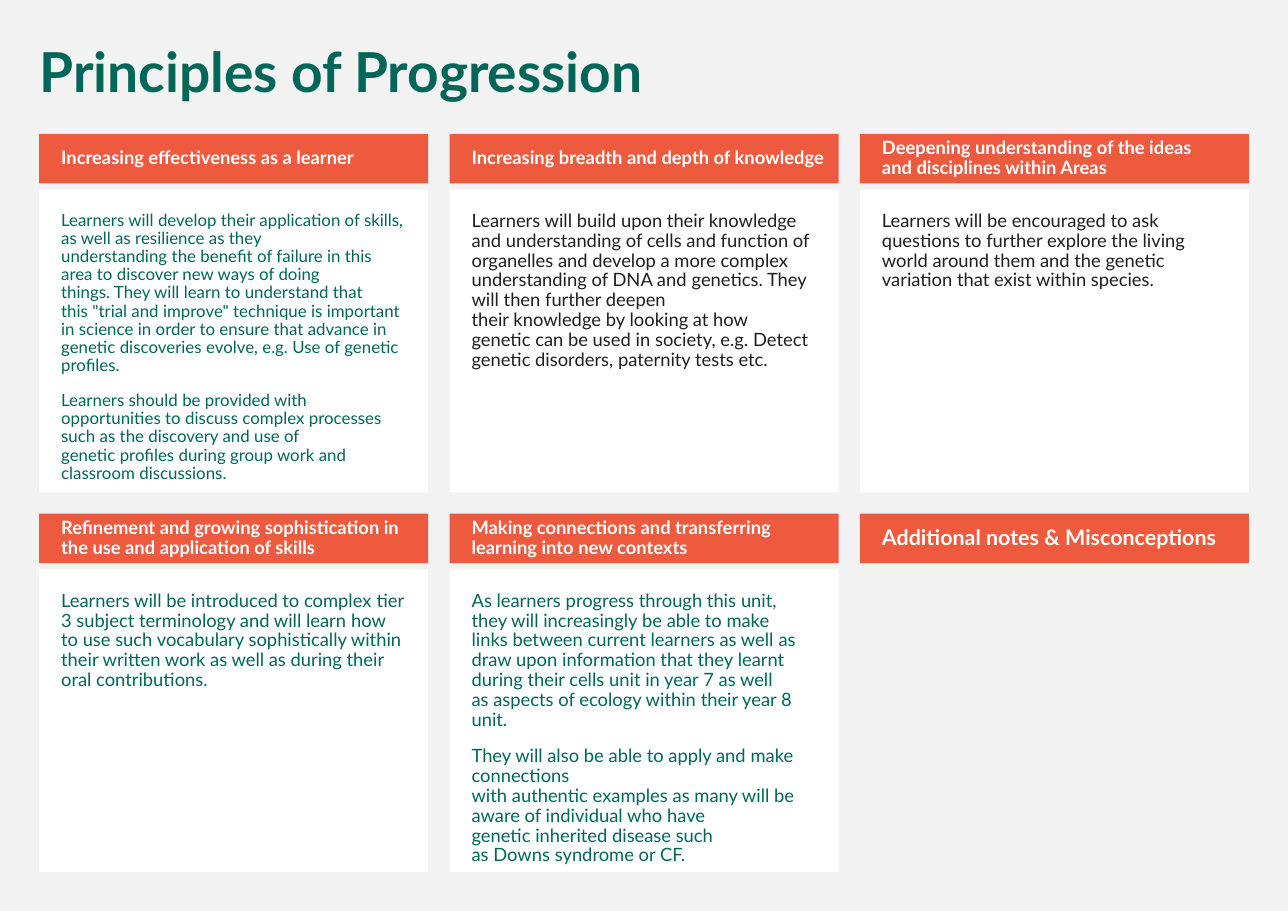
from pptx import Presentation
from pptx import util as u
from pptx.dml.color import RGBColor
from pptx.enum import shapes, text

GREEN = RGBColor(0x00, 0x67, 0x58)
ORANGE = RGBColor(0xED, 0x5A, 0x3E)
WHITE = RGBColor(0xFF, 0xFF, 0xFF)
CHARCOAL = RGBColor(0x1F, 0x1F, 0x1F)
PALE_GREY = RGBColor(0xF2, 0xF2, 0xF2)

LEFT, TOP = 25.6, 87.5
COLUMN_STEP, ROW_STEP = 268.2, 248.2
CARD_WIDTH, HEADER_HEIGHT, BODY_HEIGHT = 254.2, 32.4, 198
BODY_OFFSET = 36.4
TIE, HARD_SPACE = "_", chr(160)

CARDS = [
    ("Increasing effectiveness as a learner", 12, 11, GREEN, [
        "Learners will_develop their application of skills, as well as_resilience_as they "
        "understanding_the_benefit_of failure in this area to discover_new ways_of doing "
        "things._They will learn to understand that this_\"trial and improve\" technique is "
        "important in science in_order to ensure_that_advance in genetic_discoveries_evolve, "
        "e.g._Use of genetic profiles._",
        "Learners should_be provided with opportunities to_discuss_complex_processes such "
        "as_the discovery and use of genetic_profiles during group work and classroom "
        "discussions._",
    ]),
    ("Increasing breadth and depth of knowledge", 12, 12, CHARCOAL, [
        "Learners_will build_upon their knowledge and understanding of cells and function of "
        "organelles and develop a more complex understanding of DNA and_genetics. They will "
        "then further deepen their_knowledge_by_looking at how genetic_can be "
        "used_in_society, e.g._Detect genetic disorders,_paternity tests etc._",
    ]),
    ("Deepening understanding of the ideas and_disciplines within Areas", 12, 12, CHARCOAL, [
        "Learners will be encouraged to ask questions to further explore the living world "
        "around them and the genetic variation that exist within species.",
    ]),
    ("Refinement and growing sophistication in the use and_application of skills", 12, 12, GREEN, [
        "Learners will be introduced to complex_tier 3_subject terminology and will learn_how "
        "to use such_vocabulary sophistically within their written work as well as during "
        "their oral contributions._",
    ]),
    ("Making connections and transferring learning into_new contexts", 12, 12, GREEN, [
        "As learners_progress through this_unit, they will increasingly_be able to make "
        "links_between current learners as well_as draw upon_information that they_learnt "
        "during their cells_unit in year_7 as well as_aspects_of_ecology within_their year 8 "
        "unit._",
        "They will also be_able to apply and_make connections with_authentic_examples_as_many "
        "will be aware of individual who_have genetic_inherited disease such "
        "as_Downs_syndrome or CF._",
    ]),
    ("Additional notes & Misconceptions", 14, 12, GREEN, []),
]


def write(frame, paragraphs, size, color, bold, anchor):
    frame.word_wrap = True
    frame.auto_size = text.MSO_AUTO_SIZE.NONE
    frame.vertical_anchor = anchor
    frame.text = "\n".join(paragraphs).replace(TIE, HARD_SPACE)
    for para in frame.paragraphs:
        para.alignment = text.PP_ALIGN.LEFT
        para.line_spacing = 0.9
        para.space_before = u.Pt(11)
        para.font.name = "Lato"
        para.font.size = u.Pt(size)
        para.font.bold = bold
        para.font.color.rgb = color


def add_panel(left, top, height, fill, margins):
    box = page.shapes.add_shape(
        shapes.MSO_SHAPE.RECTANGLE, u.Pt(left), u.Pt(top), u.Pt(CARD_WIDTH), u.Pt(height))
    box.shadow.inherit = False
    box.fill.solid()
    box.fill.fore_color.rgb = fill
    box.line.fill.background()
    frame = box.text_frame
    frame.margin_left, frame.margin_top, frame.margin_right, frame.margin_bottom = map(u.Pt, margins)
    return frame


deck = Presentation()
deck.slide_width, deck.slide_height = u.Pt(841.68), u.Pt(595.44)
page = deck.slides.add_slide(deck.slide_layouts.get_by_name("Title Only"))
page.background.fill.solid()
page.background.fill.fore_color.rgb = PALE_GREY

title = page.shapes.title
title.left, title.top, title.width, title.height = map(u.Pt, (18.6, 26, 797.8, 46.8))
write(title.text_frame, ["Principles of Progression"], 36, GREEN, True, text.MSO_ANCHOR.TOP)

for index, (heading, heading_size, body_size, body_color, paragraphs) in enumerate(CARDS):
    row, column = divmod(index, 3)
    left = LEFT + column * COLUMN_STEP
    top = TOP + row * ROW_STEP
    header = add_panel(left, top, HEADER_HEIGHT, ORANGE, (14.4, 3.6, 7.2, 3.6))
    write(header, [heading], heading_size, WHITE, True, text.MSO_ANCHOR.MIDDLE)
    if paragraphs:
        body = add_panel(left, top + BODY_OFFSET, BODY_HEIGHT, WHITE, (14.4,) * 4)
        write(body, paragraphs, body_size, body_color, False, text.MSO_ANCHOR.TOP)

deck.save("out.pptx")
